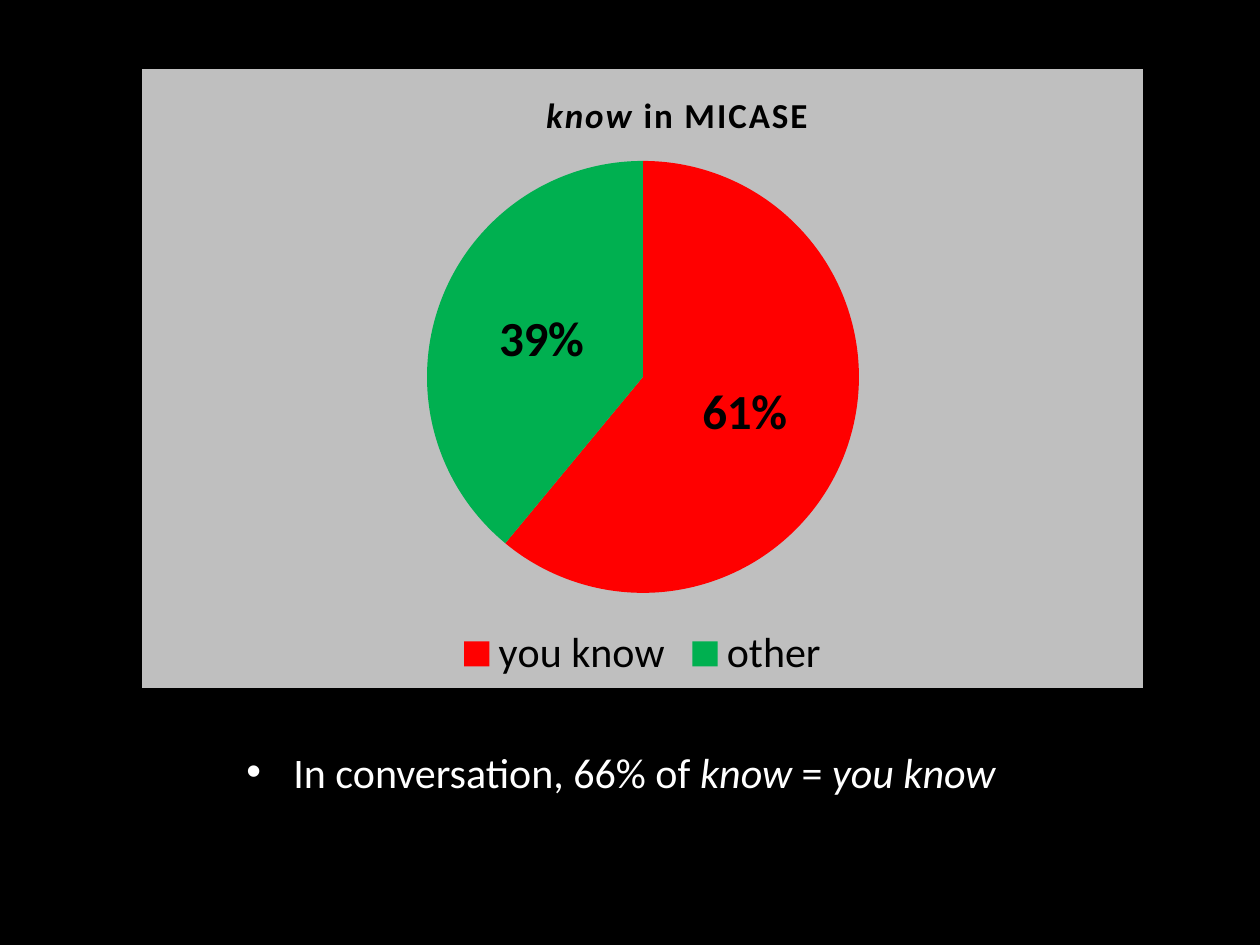
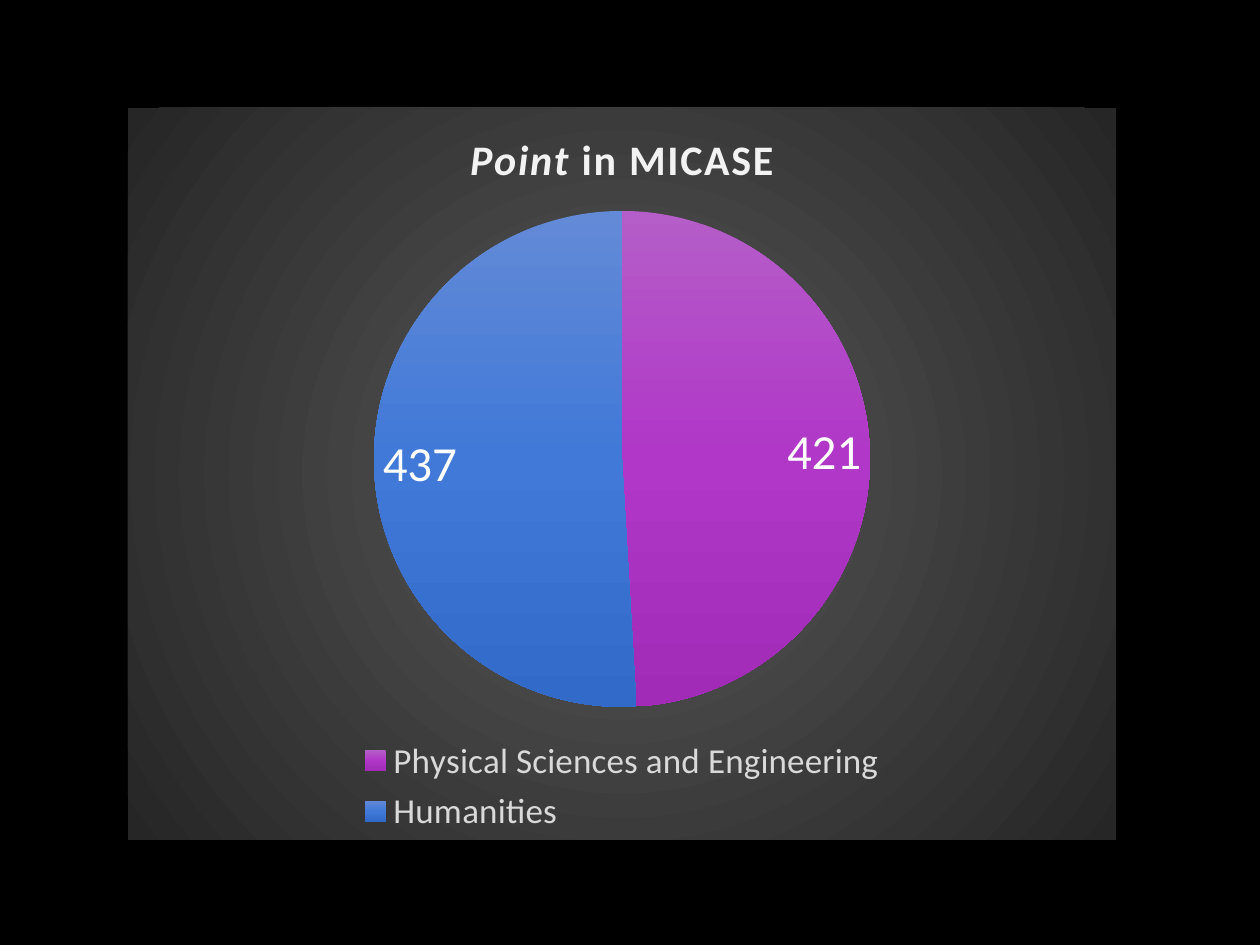
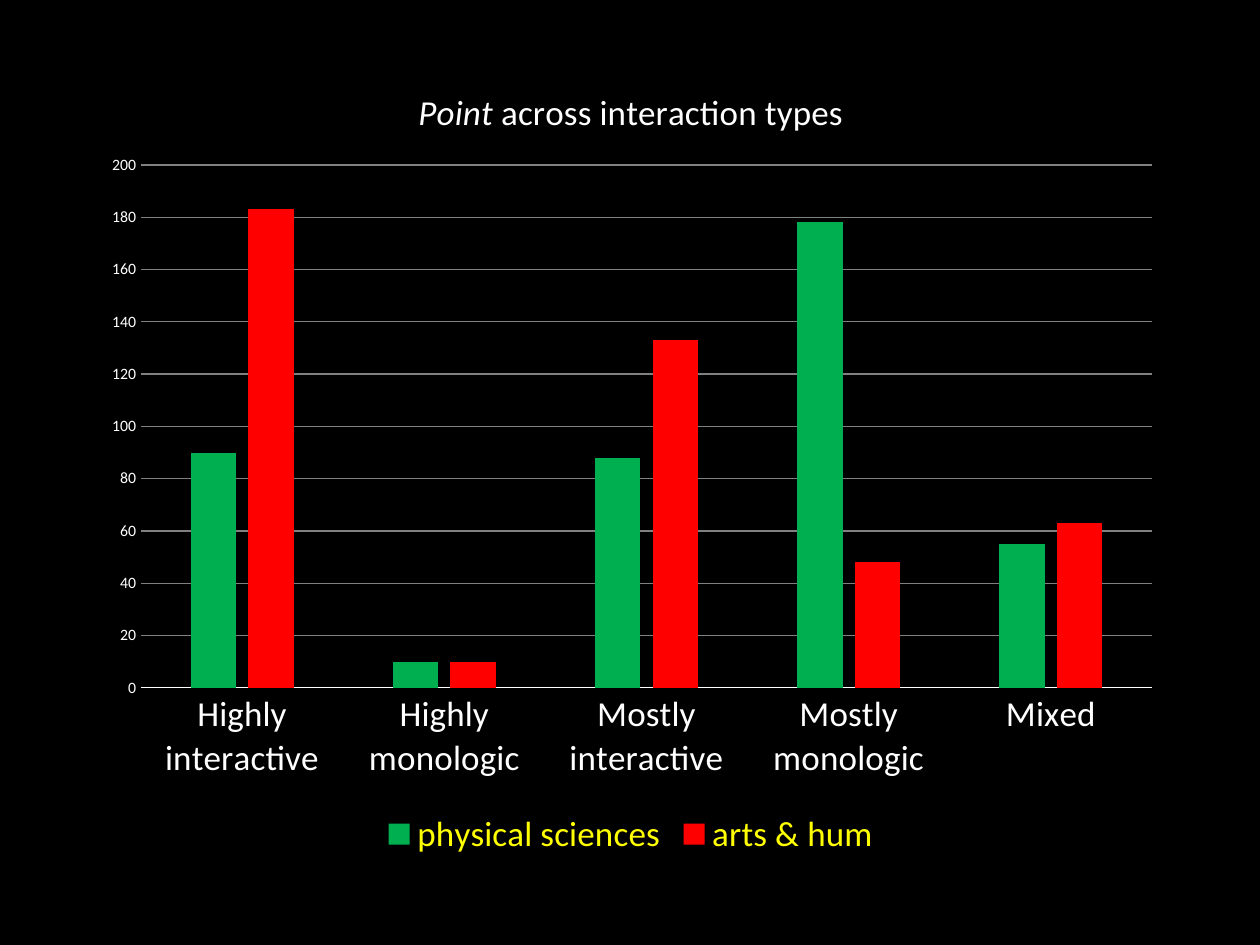
from dataclasses import dataclass

from lxml import etree
from pptx import Presentation
from pptx import util as u
from pptx.chart.data import CategoryChartData
from pptx.dml.color import RGBColor
from pptx.enum import chart as ch
from pptx.oxml import parse_xml
from pptx.oxml.ns import nsdecls, qn


@dataclass(frozen=True)
class Theme:
    """Colours, font and type sizes of the deck."""
    font: str = "Calibri"
    black: str = "000000"
    white: str = "FFFFFF"
    soft_white: str = "F2F2F2"
    pale: str = "D9D9D9"
    panel: str = "BFBFBF"
    grid: str = "808080"
    red: str = "FF0000"
    green: str = "00B050"
    yellow: str = "FFFF00"
    glow: tuple = ("595959", "262626")
    purple: tuple = ("B55DC8", "B037C8", "A12BB7")
    blue: tuple = ("638AD7", "4079D8", "316AC8")
    tick: int = 9
    base: int = 10
    body: int = 20
    large: int = 24
    label: int = 28


T = Theme()


def px(n):
    """Turn pixels into EMU."""
    return u.Emu(round(n * 914400 / 126))


def style(font, size, color, **flags):
    """Set face, size, colour and any bold or italic flag."""
    font.name, font.size = T.font, u.Pt(size)
    font.color.rgb = RGBColor.from_string(color)
    for name, value in flags.items():
        setattr(font, name, value)


def add_runs(p, runs, size, color, **flags):
    """Add (text, italic) runs to a paragraph."""
    for words, italic in runs:
        r = p.add_run()
        r.text = words
        style(r.font, size, color, italic=italic, **flags)


def fill_xml(fill, direction):
    """Return the fill element for None, a colour or a tuple of stops."""
    if fill is None:
        return parse_xml(f"<a:noFill {nsdecls('a')}/>")
    if isinstance(fill, str):
        return parse_xml(f'<a:solidFill {nsdecls("a")}><a:srgbClr val="{fill}"/></a:solidFill>')
    step = 100000 // (len(fill) - 1)
    stops = "".join(f'<a:gs pos="{i * step}"><a:srgbClr val="{c}"/></a:gs>'
                    for i, c in enumerate(fill))
    return parse_xml(f"<a:gradFill {nsdecls('a')}><a:gsLst>{stops}</a:gsLst>{direction}</a:gradFill>")


def paint(sp_pr, fill, direction=""):
    """Give a shape-properties element a fill and no line."""
    for child in list(sp_pr):
        sp_pr.remove(child)
    sp_pr.append(fill_xml(fill, direction))
    sp_pr.append(parse_xml(f"<a:ln {nsdecls('a')}><a:noFill/></a:ln>"))


def set_layout(parent, index, values, target=None):
    """Place a chart part by fractions of the chart box."""
    for old in parent.findall(qn("c:layout")):
        parent.remove(old)
    layout = etree.Element(qn("c:layout"))
    manual = etree.SubElement(layout, qn("c:manualLayout"))
    items = [("layoutTarget", target)] if target else []
    items += [("xMode", "edge"), ("yMode", "edge")]
    items += zip("xywh", (f"{v:.4f}" for v in values))
    for name, value in items:
        etree.SubElement(manual, qn(f"c:{name}")).set("val", value)
    parent.insert(index, layout)


def add_chart(slide, kind, box, plot_box, cats, series, title, legend, fill=None):
    """Add a chart with its title, legend, background and plot area."""
    data = CategoryChartData()
    data.categories = cats
    for name, values in series:
        data.add_series(name, values)
    chart = slide.shapes.add_chart(kind, *map(px, box), data).chart
    style(chart.font, T.base, T.white)

    chart.has_title = True
    runs, size, color, bold = title
    add_runs(chart.chart_title.text_frame.paragraphs[0], runs, size, color, bold=bold)
    chart.has_legend = True
    chart.legend.position = ch.XL_LEGEND_POSITION.BOTTOM
    chart.legend.include_in_layout = False
    style(chart.legend.font, *legend)

    sp_pr = parse_xml(f"<c:spPr {nsdecls('c', 'a')}/>")
    paint(sp_pr, fill, '<a:path path="circle"><a:fillToRect l="50000" t="50000" '
                       'r="50000" b="50000"/></a:path>')
    chart.element.xpath("c:chart")[0].addnext(sp_pr)
    x, y, w, h = plot_box
    set_layout(chart.element.xpath("c:chart/c:plotArea")[0], 0,
               (x / box[2], y / box[3], w / box[2], h / box[3]), "inner")
    return chart


def add_pie(slide, box, plot_box, cats, values, colors, title, legend, fill, label_color, percent):
    """Add a pie whose slices show either percentages or values."""
    chart = add_chart(slide, ch.XL_CHART_TYPE.PIE, box, plot_box, cats,
                      [("Series 1", values)], title, legend, fill)
    chart.plots[0].vary_by_categories = True
    pie = chart.plots[0].series[0]
    for i in range(len(colors)):
        pie.points[i].format.fill.solid()
    for sp_pr, color in zip(chart.element.xpath(".//c:dPt/c:spPr"), colors):
        paint(sp_pr, color, '<a:lin ang="5400000" scaled="0"/>')
    labels = pie.data_labels
    labels.show_percentage, labels.show_value = percent, not percent
    position = ch.XL_LABEL_POSITION
    labels.position = position.CENTER if percent else position.BEST_FIT
    if percent:
        labels.number_format, labels.number_format_is_linked = "0%", False
    style(labels.font, T.label, label_color, bold=percent)
    for r_pr in chart.element.xpath("c:chart/c:title//a:r/a:rPr"):
        r_pr.set("spc", "100")
    return chart


def add_bullet(slide, box, runs):
    """Add one bulleted line of text."""
    tf = slide.shapes.add_textbox(*map(px, box)).text_frame
    tf.word_wrap = True
    p = tf.paragraphs[0]
    p_pr = p._p.get_or_add_pPr()
    p_pr.set("marL", str(px(47)))
    p_pr.set("indent", str(px(-47)))
    etree.SubElement(p_pr, qn("a:buFont")).set("typeface", "Arial")
    etree.SubElement(p_pr, qn("a:buChar")).set("char", "•")
    add_runs(p, runs, T.large, T.white)


def know_slide(slide):
    """Show how often know belongs to you know."""
    chart = add_pie(slide, (142, 69, 1001, 619), (285, 92, 432, 432),
                    ["you know", "other"], (61, 39), (T.red, T.green),
                    ([("know", True), (" in MICASE", False)], T.body, T.black, True),
                    (T.large, T.black), T.panel, T.black, True)
    set_layout(chart.element.xpath("c:chart/c:title")[0], 1, (0.4, 0.03))
    add_bullet(slide, (234, 740, 782, 62),
               [("In conversation, 66% of ", False), ("know", True),
                (" = ", False), ("you know", True)])


def point_slide(slide):
    """Show the uses of point in two fields."""
    add_pie(slide, (128, 108, 988, 732), (246, 103, 496, 496),
            ["Physical Sciences and Engineering", "Humanities"], (421, 437),
            (T.purple, T.blue),
            ([("Point", True), (" in MICASE", False)], T.large, T.soft_white, True),
            (T.body, T.pale), T.glow, T.white, False)


def interaction_slide(slide):
    """Compare the uses of point across interaction types."""
    chart = add_chart(
        slide, ch.XL_CHART_TYPE.COLUMN_CLUSTERED, (89, 62, 1084, 801), (52, 103, 1011, 523),
        ["Highly interactive", "Highly monologic", "Mostly interactive",
         "Mostly monologic", "Mixed"],
        [("physical sciences", (90, 10, 88, 178, 55)), ("arts & hum", (183, 10, 133, 48, 63))],
        ([("Point", True), (" across interaction types", False)], T.body, T.white, False),
        (T.body, T.yellow))
    plot = chart.plots[0]
    plot.vary_by_categories = False
    plot.gap_width, plot.overlap = 219, -27
    for bars, color in zip(plot.series, (T.green, T.red)):
        bars.invert_if_negative = False
        bars.format.fill.solid()
        bars.format.fill.fore_color.rgb = RGBColor.from_string(color)

    cat, val = chart.category_axis, chart.value_axis
    for axis, size in ((cat, T.body), (val, T.tick)):
        axis.major_tick_mark = axis.minor_tick_mark = ch.XL_TICK_MARK.NONE
        style(axis.tick_labels.font, size, T.white)
    val.minimum_scale, val.maximum_scale, val.major_unit = 0, 200, 20
    val.has_major_gridlines = True
    val.format.line.fill.background()
    for line, color in ((cat.format.line, T.white), (val.major_gridlines.format.line, T.grid)):
        line.color.rgb = RGBColor.from_string(color)
        line.width = u.Pt(0.75)


def main():
    """Build the three slides and save them."""
    prs = Presentation()
    prs.slide_width, prs.slide_height = px(1260), px(945)
    for build in (know_slide, point_slide, interaction_slide):
        slide = prs.slides.add_slide(prs.slide_layouts[6])
        slide.background.fill.solid()
        slide.background.fill.fore_color.rgb = RGBColor.from_string(T.black)
        build(slide)
    prs.save("out.pptx")


if __name__ == "__main__":
    main()
